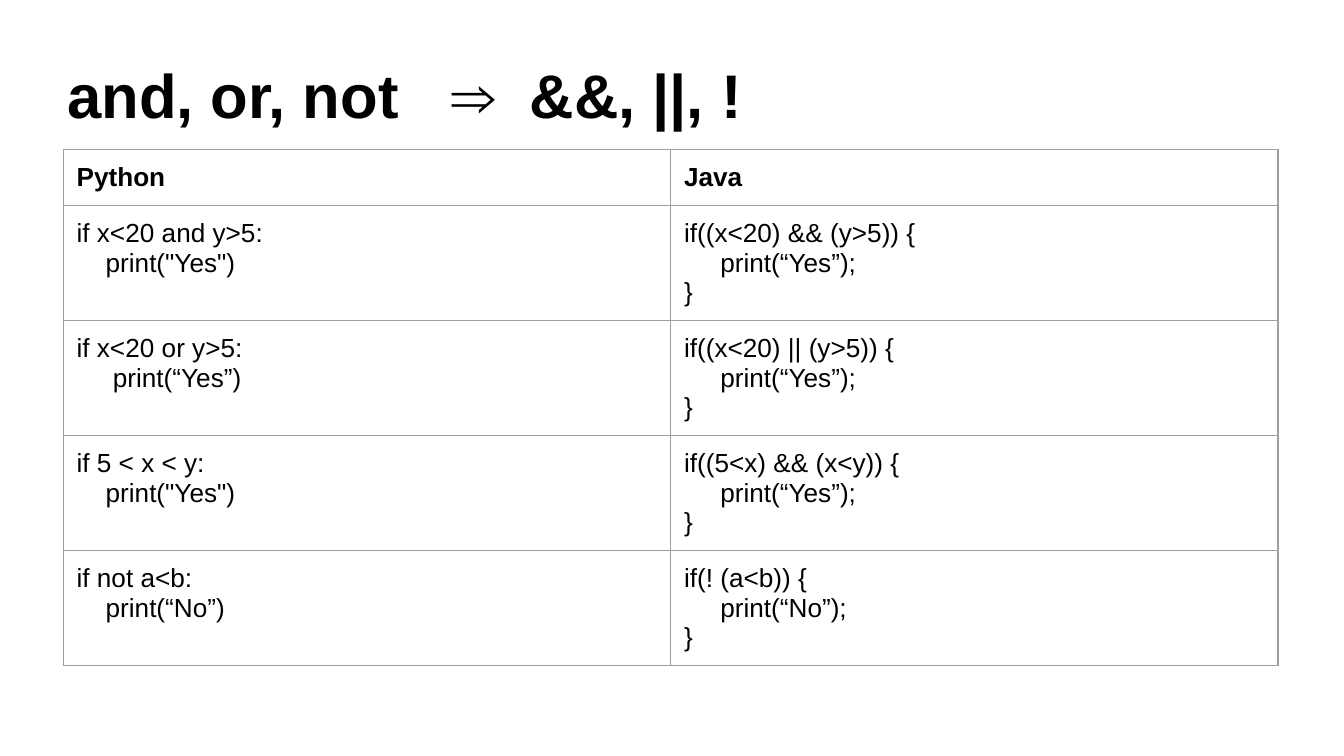
from dataclasses import dataclass

from lxml import etree
from pptx import Presentation
from pptx.dml.color import RGBColor
from pptx.enum.text import MSO_ANCHOR, MSO_AUTO_SIZE, PP_ALIGN
from pptx.oxml.ns import qn
from pptx.slide import Slide
from pptx.table import _Cell
from pptx.text.text import _Paragraph
from pptx.util import Inches, Pt

LEFT = PP_ALIGN.LEFT
TOP, MIDDLE = MSO_ANCHOR.TOP, MSO_ANCHOR.MIDDLE
NO_AUTOFIT = MSO_AUTO_SIZE.NONE

BLACK = RGBColor(0x00, 0x00, 0x00)
GRAY = RGBColor(0x9E, 0x9E, 0x9E)
FONT = "Arial"

PAGE_WIDTH = Inches(10)
PAGE_HEIGHT = PAGE_WIDTH * 9 // 16
COLUMN_WIDTH = Inches(4.52)
HEADER_HEIGHT, CODE_HEIGHT = Inches(0.38), Inches(0.79)
CELL_MARGIN = Inches(0.1)
TITLE_TABS = (Inches(2.86), Inches(3.44))


@dataclass(frozen=True)
class Comparison:
    python: str
    java: str


def java_if(condition: str, answer: str) -> str:
    return f"if({condition}) {{\n     print(“{answer}”);\n}}"


HEADER = Comparison("Python", "Java")
EXAMPLES = [
    Comparison('if x<20 and y>5:\n    print("Yes")', java_if("(x<20) && (y>5)", "Yes")),
    Comparison("if x<20 or y>5:\n     print(“Yes”)", java_if("(x<20) || (y>5)", "Yes")),
    Comparison('if 5 < x < y:\n    print("Yes")', java_if("(5<x) && (x<y)", "Yes")),
    Comparison("if not a<b:\n    print(“No”)", java_if("! (a<b)", "No")),
]


def format_runs(para: _Paragraph, size: float, bold: bool) -> None:
    para.alignment = LEFT
    for span in para.runs:
        span.font.name = FONT
        span.font.size = Pt(size)
        span.font.bold = bold
        span.font.color.rgb = BLACK


def draw_title(page: Slide) -> None:
    title = page.shapes.title
    title.left, title.top = int(PAGE_WIDTH * 0.04), int(PAGE_HEIGHT * 0.075)
    title.width, title.height = int(PAGE_WIDTH * 0.92), int(PAGE_HEIGHT * 0.112)
    frame = title.text_frame
    frame.text = "and, or, not\t⇒\t&&, ||, !"
    frame.auto_size = NO_AUTOFIT
    frame.vertical_anchor = MIDDLE
    para = frame.paragraphs[0]
    tabs = etree.SubElement(para._p.get_or_add_pPr(), qn("a:tabLst"))
    for position in TITLE_TABS:
        etree.SubElement(tabs, qn("a:tab"), pos=str(position), algn="l")
    para.line_spacing = 0.9
    format_runs(para, 33, True)


def draw_borders(cell: _Cell) -> None:
    properties = cell._tc.get_or_add_tcPr()
    for side in ("a:lnL", "a:lnR", "a:lnT", "a:lnB"):
        line = etree.SubElement(properties, qn(side), w=str(Pt(0.75)))
        fill = etree.SubElement(line, qn("a:solidFill"))
        etree.SubElement(fill, qn("a:srgbClr"), val=str(GRAY))


def fill_cell(cell: _Cell, text: str, bold: bool) -> None:
    draw_borders(cell)
    cell.fill.background()
    cell.margin_left = cell.margin_right = CELL_MARGIN
    cell.margin_top = cell.margin_bottom = CELL_MARGIN
    cell.vertical_anchor = TOP
    cell.text_frame.text = text
    for para in cell.text_frame.paragraphs:
        format_runs(para, 14, bold)


def draw_table(page: Slide) -> None:
    rows = [HEADER, *EXAMPLES]
    height = HEADER_HEIGHT + CODE_HEIGHT * len(EXAMPLES)
    table = page.shapes.add_table(
        len(rows), 2, Inches(0.47), Inches(1.11), COLUMN_WIDTH * 2, height
    ).table
    table.first_row = table.horz_banding = False
    for column in table.columns:
        column.width = COLUMN_WIDTH
    for index, comparison in enumerate(rows):
        is_header = index == 0
        table.rows[index].height = HEADER_HEIGHT if is_header else CODE_HEIGHT
        fill_cell(table.cell(index, 0), comparison.python, is_header)
        fill_cell(table.cell(index, 1), comparison.java, is_header)


def main() -> None:
    deck = Presentation()
    deck.slide_width, deck.slide_height = PAGE_WIDTH, PAGE_HEIGHT
    page = deck.slides.add_slide(deck.slide_layouts.get_by_name("Title Only"))
    draw_title(page)
    draw_table(page)
    deck.save("out.pptx")


if __name__ == "__main__":
    main()
